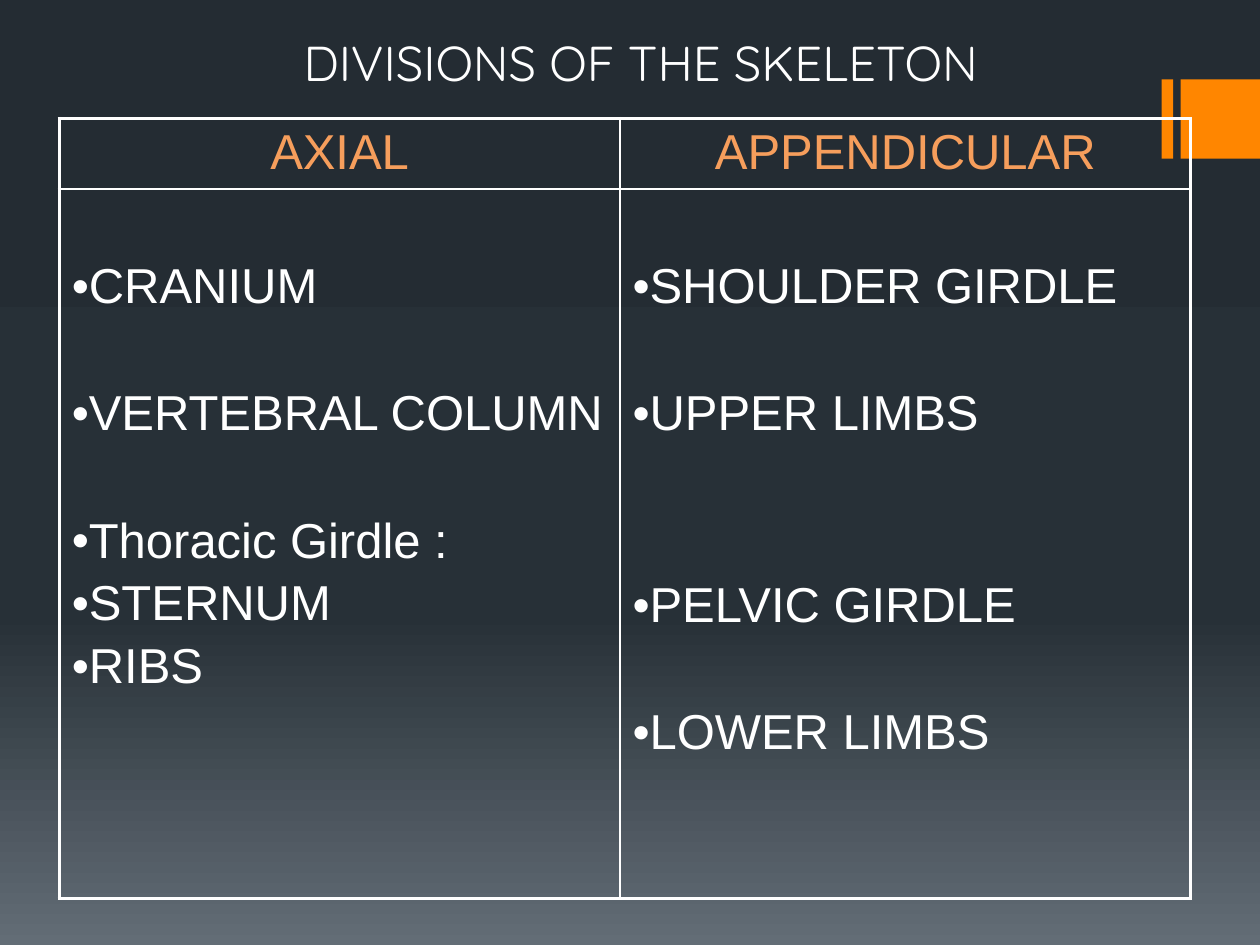
from dataclasses import dataclass

from lxml.etree import SubElement
from pptx import Presentation
from pptx.dml.color import RGBColor
from pptx.enum.shapes import MSO_SHAPE
from pptx.enum.text import MSO_ANCHOR, MSO_AUTO_SIZE, PP_ALIGN
from pptx.oxml.ns import qn
from pptx.util import Inches, Pt

WHITE = "FFFFFF"
PEACH = "F69E5C"
ORANGE = "FF8600"
STOPS = ((0, "242C33"), (65, "273037"), (100, "636D76"))
LINE = 36.8
LEAD = 4.6


@dataclass
class Item:
    text: str
    skip: int = 0


@dataclass
class Column:
    head: str
    width: float
    items: list[Item]


COLUMNS = [
    Column("AXIAL", 4.45, [
        Item("CRANIUM"),
        Item("VERTEBRAL COLUMN", 1),
        Item("Thoracic Girdle :", 1),
        Item("STERNUM"),
        Item("RIBS"),
    ]),
    Column("APPENDICULAR", 4.53, [
        Item("SHOULDER GIRDLE"),
        Item("UPPER LIMBS", 1),
        Item("PELVIC GIRDLE", 2),
        Item("LOWER LIMBS", 1),
    ]),
]


def paint(fill, color: str) -> None:
    fill.solid()
    fill.fore_color.rgb = RGBColor.from_string(color)


def write(par, text: str, font="Arial", size=28, color=WHITE,
          align=PP_ALIGN.LEFT, before=0, bullet=False) -> None:
    par.alignment = align
    par.space_before = Pt(before)
    if bullet:
        props = par._p.get_or_add_pPr()
        props.set("marL", "0")
        props.set("indent", "0")
        SubElement(props, qn("a:buFont"), typeface=font)
        SubElement(props, qn("a:buChar"), char="•")
    run = par.add_run()
    run.text = text
    run.font.name = font
    run.font.size = Pt(size)
    run.font.bold = False
    run.font.color.rgb = RGBColor.from_string(color)


def shade(slide) -> None:
    fill = slide.background.fill
    fill.gradient()
    fill.gradient_angle = 270
    stops = next(slide._element.iter(qn("a:gsLst")))
    stops.clear()
    for place, color in STOPS:
        stop = SubElement(stops, qn("a:gs"), pos=str(place * 1000))
        SubElement(stop, qn("a:srgbClr"), val=color)


def bar(slide, left: float, width: float) -> None:
    shape = slide.shapes.add_shape(
        MSO_SHAPE.RECTANGLE, Inches(left), Inches(0.63), Inches(width), Inches(0.63))
    shape.shadow.inherit = False
    paint(shape.fill, ORANGE)
    shape.line.fill.background()


def border(cell, row: int, col: int) -> None:
    outer = {"L": col == 0, "R": col == 1, "T": row == 0, "B": row == 1}
    props = cell._tc.get_or_add_tcPr()
    for spot, (side, thick) in enumerate(outer.items()):
        line = SubElement(props, qn(f"a:ln{side}"), w=str(Pt(2.25 if thick else 1)))
        fill = SubElement(line, qn("a:solidFill"))
        SubElement(fill, qn("a:srgbClr"), val=WHITE)
        props.insert(spot, line)


def grid(slide) -> None:
    width = sum(column.width for column in COLUMNS)
    table = slide.shapes.add_table(
        2, len(COLUMNS), Inches(0.47), Inches(0.94), Inches(width), Inches(6.19)).table
    table.first_row = False
    table.horz_banding = False
    table.rows[0].height = Inches(0.56)
    table.rows[1].height = Inches(5.63)
    for col, column in enumerate(COLUMNS):
        table.columns[col].width = Inches(column.width)
        for row in range(2):
            cell = table.cell(row, col)
            cell.fill.background()
            border(cell, row, col)
        head, body = table.cell(0, col), table.cell(1, col)
        write(head.text_frame.paragraphs[0], column.head, color=PEACH,
              align=PP_ALIGN.CENTER)
        body.margin_top = Inches(0.56)
        frame = body.text_frame
        for spot, item in enumerate(column.items):
            par = frame.add_paragraph() if spot else frame.paragraphs[0]
            before = LEAD + LINE * item.skip if spot else 0
            write(par, item.text, before=before, bullet=True)


def main() -> None:
    deck = Presentation()
    deck.slide_width, deck.slide_height = Inches(10), Inches(7.5)
    slide = deck.slides.add_slide(deck.slide_layouts[5])
    shade(slide)
    bar(slide, 9.22, 0.09)
    bar(slide, 9.37, 0.63)
    title = slide.shapes.title
    title.left, title.top = Inches(0.83), Inches(0.21)
    title.width, title.height = Inches(8.51), Inches(0.57)
    frame = title.text_frame
    frame.word_wrap = True
    frame.auto_size = MSO_AUTO_SIZE.NONE
    frame.vertical_anchor = MSO_ANCHOR.MIDDLE
    write(frame.paragraphs[0], "DIVISIONS OF THE SKELETON", font="Quicksand",
          align=PP_ALIGN.CENTER)
    grid(slide)
    deck.save("out.pptx")


if __name__ == "__main__":
    main()
